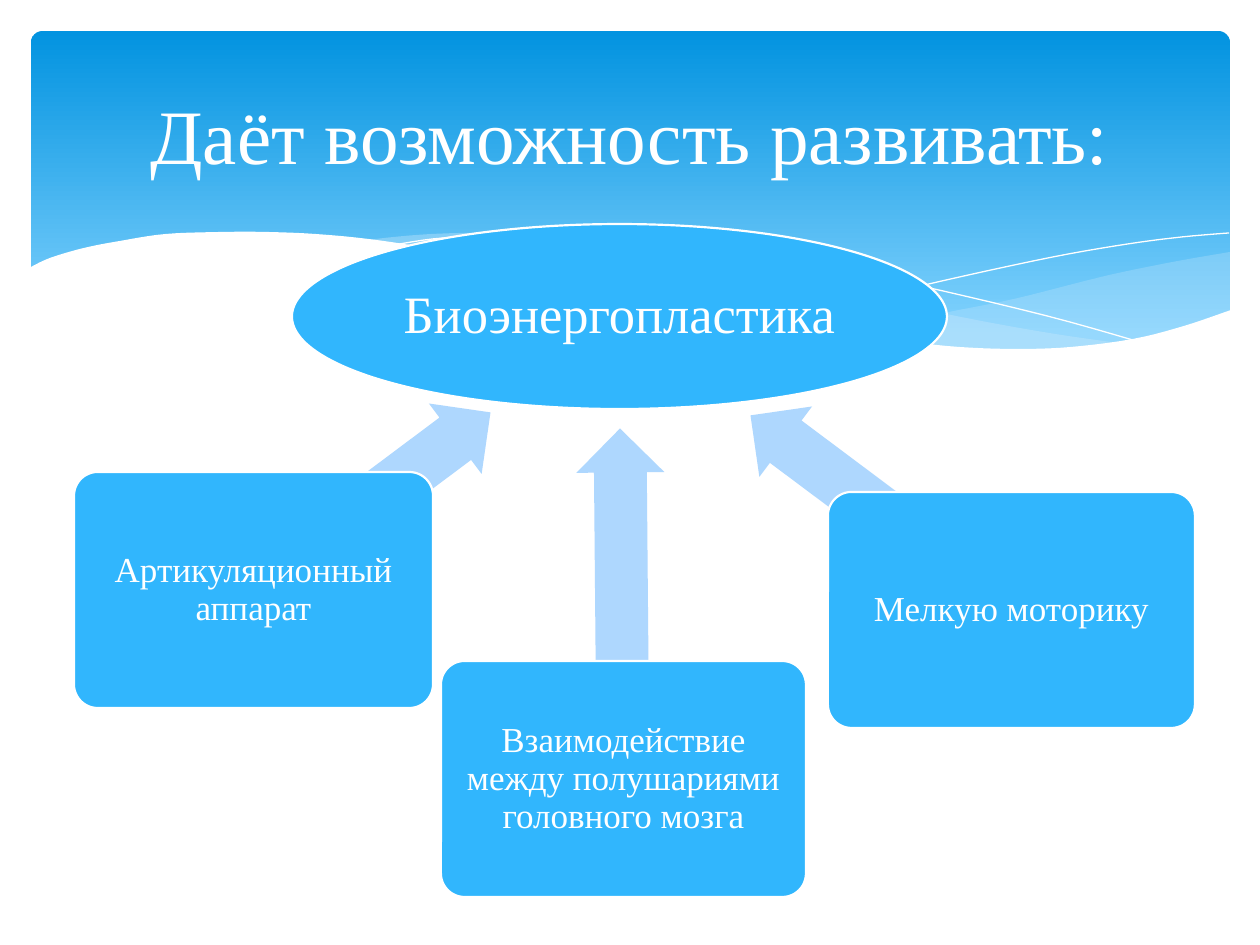
from dataclasses import dataclass
from itertools import chain

from lxml import etree
from pptx import Presentation
from pptx.dml.color import RGBColor
from pptx.enum import shapes, text
from pptx.oxml import ns
from pptx import util as u

PX = 914400 / 126
KIND = shapes.MSO_SHAPE


@dataclass(frozen=True)
class Theme:
    """Colours, font and type sizes of the slide."""
    font: str = "Times New Roman"
    white: str = "FFFFFF"
    node: str = "31B6FD"
    arrow: str = "AED7FE"
    mist: str = "C6E7FC"
    top: str = "0293E0"
    base: str = "83D3FE"
    title: int = 44
    hub: int = 30
    leaf: int = 20
    edge: float = 1.25


THEME = Theme()

MIST = [
    (29, [[(1230, 252), (1178, 261), (1123, 272), (1085, 281), (1014, 299),
           (949, 312), (890, 324), (833, 334)],
          [(833, 334), (888, 341), (939, 346), (998, 349), (1052, 349),
           (1099, 345), (1150, 336), (1187, 326), (1230, 311)]]),
    (40, [[(1125, 344), (1055, 334), (976, 320), (890, 302), (793, 280),
           (717, 262), (648, 249), (586, 241), (529, 236), (479, 233),
           (433, 234), (394, 237), (360, 241)],
          [(360, 241), (431, 251), (509, 266), (566, 280), (668, 302),
           (757, 321), (838, 335), (910, 345), (974, 349), (1031, 350),
           (1080, 349), (1125, 344)]]),
]
HAIRS = [
    [(389, 246), (433, 239), (488, 236), (546, 236), (616, 239), (701, 248),
     (801, 262), (916, 285), (1047, 316), (1143, 343)],
    [(772, 324), (847, 304), (942, 281), (1053, 257), (1128, 244),
     (1182, 237), (1229, 233)],
]
FRONT = [
    [(1231, 310), (1184, 326), (1133, 339), (1071, 347), (1019, 349),
     (959, 347), (892, 340), (816, 330), (730, 315), (634, 294), (563, 277),
     (493, 261), (428, 248), (368, 239), (315, 234), (266, 232), (223, 232),
     (166, 234), (120, 241), (84, 248), (50, 258), (29, 268)],
    [(29, 415), (1231, 415)],
]
LEAVES = [
    ("Артикуляционный аппарат", (74, 472, 359, 236), (224, 457, 296, 88), 143.2),
    ("Взаимодействие между полушариями головного мозга",
     (441, 661, 365, 236), (447, 559, 349, 88), 89.5),
    ("Мелкую моторику", (828, 492, 367, 236), (718, 469, 326, 88), 36.8),
]


def px(n):
    """Turn pixels into EMU."""
    return u.Emu(round(n * PX))


def rgb(tone):
    """Turn a hex string into a colour."""
    return RGBColor.from_string(tone)


def paint(shape, fill=None, line=None, width=0):
    """Set fill and line and drop the shadow."""
    shape.shadow.inherit = False
    if fill:
        shape.fill.solid()
        shape.fill.fore_color.rgb = rgb(fill)
    else:
        shape.fill.background()
    if line:
        shape.line.color.rgb = rgb(line)
        shape.line.width = u.Pt(width)
    else:
        shape.line.fill.background()


def fade(shape, share):
    """Give a solid fill an opacity in percent."""
    tone = shape.fill._xPr.find(".//" + ns.qn("a:srgbClr"))
    etree.SubElement(tone, ns.qn("a:alpha")).set("val", str(share * 1000))


def smooth(knots, steps=5):
    """Run a Catmull-Rom curve through the knots."""
    ends = [knots[0], *knots, knots[-1]]
    dots = []
    for a, b, c, d in zip(ends, ends[1:], ends[2:], ends[3:]):
        for i in range(steps):
            t = i / steps
            dots.append(tuple(
                (2 * q + (r - p) * t + (2 * p - 5 * q + 4 * r - s) * t ** 2
                 + (3 * q - p - 3 * r + s) * t ** 3) / 2
                for p, q, r, s in zip(a, b, c, d)))
    return dots + [knots[-1]]


def wave(slide, edges, close=True):
    """Draw an outline made of smooth edges."""
    dots = [(px(x), px(y)) for x, y in chain.from_iterable(map(smooth, edges))]
    form = slide.shapes.build_freeform(*dots[0], scale=1.0)
    form.add_line_segments(dots[1:], close=close)
    return form.convert_to_shape()


def write(shape, words, size, inset):
    """Put centred text into a shape."""
    frame = shape.text_frame
    frame.text = words
    frame.word_wrap = True
    frame.vertical_anchor = text.MSO_ANCHOR.MIDDLE
    frame.margin_left = frame.margin_right = px(inset)
    frame.margin_top = frame.margin_bottom = px(inset)
    para = frame.paragraphs[0]
    para.alignment = text.PP_ALIGN.CENTER
    font = para.runs[0].font
    font.name, font.size = THEME.font, u.Pt(size)
    font.color.rgb = rgb(THEME.white)
    return para


def add(slide, kind, box):
    """Add a preset shape at a pixel box."""
    return slide.shapes.add_shape(kind, *map(px, box))


def node(slide, kind, box, words, size, inset):
    """Add a filled shape with a white edge and text."""
    shape = add(slide, kind, box)
    paint(shape, THEME.node, THEME.white, THEME.edge)
    if kind == KIND.ROUNDED_RECTANGLE:
        shape.adjustments[0] = 0.1
    write(shape, words, size, inset).line_spacing = 0.9


def arrow(slide, box, turn):
    """Add a turned block arrow."""
    shape = add(slide, KIND.LEFT_ARROW, box)
    paint(shape, THEME.arrow)
    shape.adjustments[0] = 0.6
    shape.adjustments[1] = 0.5
    shape.rotation = turn


def banner(slide):
    """Draw the blue banner with its waves."""
    panel = add(slide, KIND.ROUNDED_RECTANGLE, (31, 31, 1199, 340))
    paint(panel)
    panel.adjustments[0] = 0.034
    panel.fill.gradient()
    panel.fill.gradient_angle = 270
    tones = (THEME.top, 0), (THEME.base, 0.9)
    for stop, (tone, place) in zip(panel.fill.gradient_stops, tones):
        stop.color.rgb = rgb(tone)
        stop.position = place
    for share, edges in MIST:
        shape = wave(slide, edges)
        paint(shape, THEME.mist)
        fade(shape, share)
    for hair in HAIRS:
        paint(wave(slide, [hair], close=False), line=THEME.white)
    paint(wave(slide, FRONT), THEME.white)


def main():
    """Build and save the slide."""
    deck = Presentation()
    deck.slide_width, deck.slide_height = px(1260), px(945)
    slide = deck.slides.add_slide(deck.slide_layouts[6])
    banner(slide)
    node(slide, KIND.OVAL, (292, 224, 655, 185), "Биоэнергопластика", THEME.hub, 3)
    for words, box, shaft, turn in LEAVES:
        arrow(slide, shaft, turn)
        node(slide, KIND.ROUNDED_RECTANGLE, box, words, THEME.leaf, 5)
    title = slide.shapes.add_textbox(*map(px, (63, 47, 1134, 173)))
    write(title, "Даёт возможность развивать:", THEME.title, 6)
    deck.save("out.pptx")


if __name__ == "__main__":
    main()
